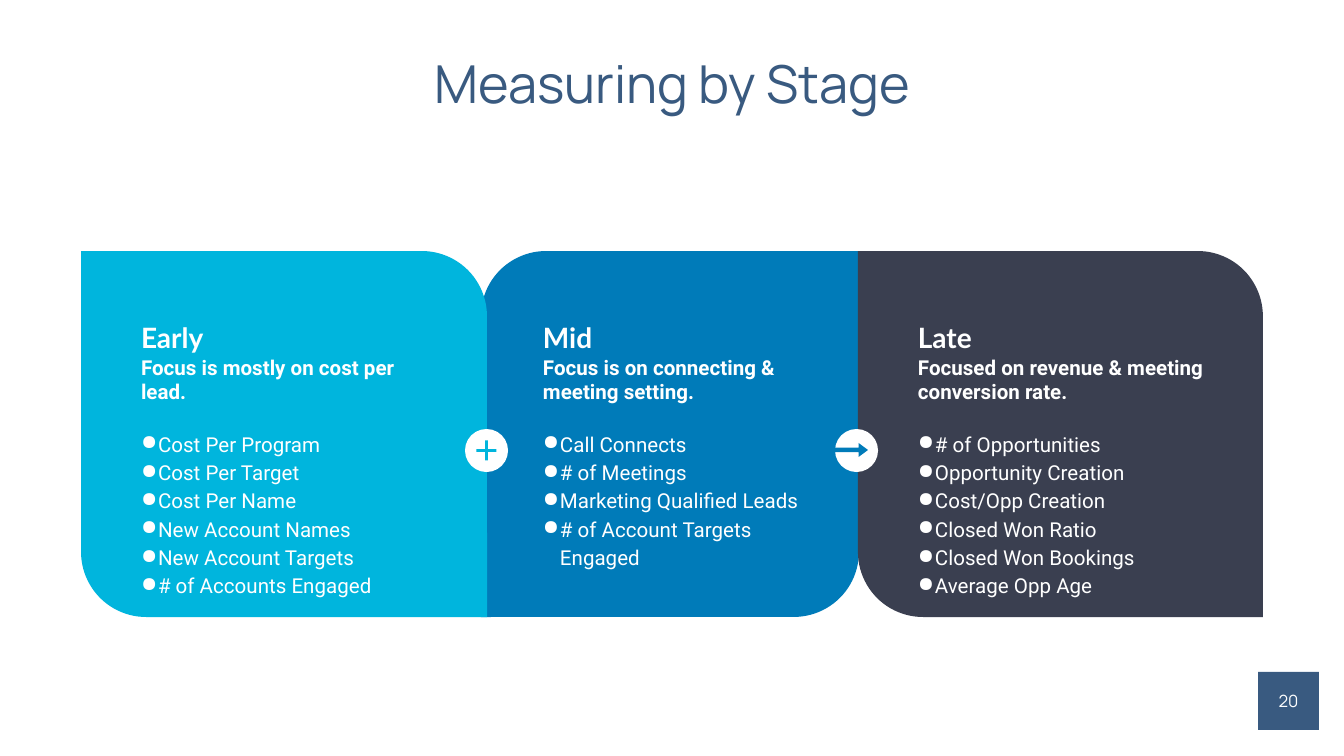
from typing import NamedTuple

from lxml.etree import SubElement
from pptx import Presentation
from pptx.dml.color import RGBColor
from pptx.enum.shapes import MSO_SHAPE as Preset
from pptx.enum.text import MSO_ANCHOR as Anchor, PP_ALIGN as Align
from pptx.oxml.ns import qn
from pptx.util import Pt

PX = 914400 / 134.4
NAVY, CYAN, BLUE, SLATE, WHITE = "395A80", "00B5DD", "007BB9", "3A3F50", "FFFFFF"
CARD_TOP, CARD_HEIGHT, CARD_ROUNDING = 251, 366, 0.178
HEADING_TOP, HEADING_HEIGHT = 308, 107
METRICS_TOP, METRICS_HEIGHT = 415, 181
TEXT_INSET = 13
BULLET_MARGIN, BULLET_INDENT = 17, -27
DISC_SIZE, DISC_TOP = 43, 429


class Box(NamedTuple):
    left: int
    top: int
    width: int
    height: int


class Stage(NamedTuple):
    name: str
    focus: str
    metrics: list[str]
    color: str
    left: int
    width: int
    text_left: int
    text_width: int
    corners: tuple[float, float]


class Joint(NamedTuple):
    disc_left: int
    symbol: Preset
    symbol_box: Box
    color: str
    adjustments: tuple[float, ...]


RISING, FALLING = (0, CARD_ROUNDING), (CARD_ROUNDING, 0)
STAGES = [
    Stage("Mid", "Focus is on connecting & meeting setting.",
          ["Call Connects", "# of Meetings", "Marketing Qualified Leads",
           "# of Account Targets Engaged"],
          BLUE, 481, 378, 530, 282, FALLING),
    Stage("Early", "Focus is mostly on cost per lead.",
          ["Cost Per Program", "Cost Per Target", "Cost Per Name",
           "New Account Names", "New Account Targets", "# of Accounts Engaged"],
          CYAN, 81, 406, 128, 304, RISING),
    Stage("Late", "Focused on revenue & meeting conversion rate.",
          ["# of Opportunities", "Opportunity Creation", "Cost/Opp Creation",
           "Closed Won Ratio", "Closed Won Bookings", "Average Opp Age"],
          SLATE, 858, 405, 905, 327, RISING),
]
JOINTS = [
    Joint(835, Preset.RIGHT_ARROW, Box(835, 443, 33, 14), BLUE, (0.32, 0.67)),
    Joint(465, Preset.MATH_PLUS, Box(473, 437, 27, 27), CYAN, (0.1,)),
]


def emu(px: int) -> int:
    return round(px * PX)


def rgb(color: str) -> RGBColor:
    return RGBColor.from_string(color)


def add_solid(slide, preset: Preset, box: Box, color: str, adjustments=()):
    shape = slide.shapes.add_shape(preset, *map(emu, box))
    shape.shadow.inherit = False
    shape.fill.solid()
    shape.fill.fore_color.rgb = rgb(color)
    shape.line.fill.background()
    for index, value in enumerate(adjustments):
        shape.adjustments[index] = value
    return shape


def set_frame(shape, inset: int, anchor=Anchor.TOP):
    frame = shape.text_frame
    frame.word_wrap = True
    frame.vertical_anchor = anchor
    frame.margin_left = frame.margin_right = emu(inset)
    frame.margin_top = frame.margin_bottom = emu(inset)
    return frame


def add_frame(slide, box: Box, inset: int, anchor=Anchor.TOP):
    return set_frame(slide.shapes.add_textbox(*map(emu, box)), inset, anchor)


def style(paragraph, text: str, font: str, size: int, color=WHITE, bold=False,
          align=Align.LEFT) -> None:
    paragraph.text = text
    paragraph.alignment = align
    paragraph.font.name = font
    paragraph.font.size = Pt(size)
    paragraph.font.bold = bold
    paragraph.font.color.rgb = rgb(color)


def add_bullet(paragraph) -> None:
    properties = paragraph._p.get_or_add_pPr()
    properties.set("marL", str(emu(BULLET_MARGIN)))
    properties.set("indent", str(emu(BULLET_INDENT)))
    bullet_color = SubElement(properties, qn("a:buClr"))
    SubElement(bullet_color, qn("a:srgbClr"), val=WHITE)
    SubElement(properties, qn("a:buChar"), char="●")


def draw_stage(slide, stage: Stage) -> None:
    add_solid(slide, Preset.ROUND_2_DIAG_RECTANGLE,
              Box(stage.left, CARD_TOP, stage.width, CARD_HEIGHT),
              stage.color, stage.corners)

    heading = add_frame(slide, Box(stage.text_left, HEADING_TOP,
                                   stage.text_width, HEADING_HEIGHT), TEXT_INSET)
    style(heading.paragraphs[0], stage.name, "Lato", 15, bold=True)
    style(heading.add_paragraph(), stage.focus, "Roboto", 11, bold=True)

    metrics = add_frame(slide, Box(stage.text_left, METRICS_TOP,
                                   stage.text_width, METRICS_HEIGHT), TEXT_INSET)
    for index, metric in enumerate(stage.metrics):
        item = metrics.add_paragraph() if index else metrics.paragraphs[0]
        add_bullet(item)
        item.line_spacing = 1.15
        style(item, metric, "Roboto", 11)


def draw_joint(slide, joint: Joint) -> None:
    add_solid(slide, Preset.OVAL,
              Box(joint.disc_left, DISC_TOP, DISC_SIZE, DISC_SIZE), WHITE)
    add_solid(slide, joint.symbol, joint.symbol_box, joint.color, joint.adjustments)


def main() -> None:
    deck = Presentation()
    deck.slide_width, deck.slide_height = emu(1344), emu(756)
    slide = deck.slides.add_slide(deck.slide_layouts[6])

    title = add_frame(slide, Box(84, 59, 1176, 56), 0, Anchor.MIDDLE).paragraphs[0]
    title.line_spacing = 0.9
    style(title, "Measuring by Stage", "Manrope", 28, NAVY, align=Align.CENTER)

    badge = add_solid(slide, Preset.RECTANGLE, Box(1258, 672, 61, 58), NAVY)
    page_number = set_frame(badge, 0, Anchor.MIDDLE).paragraphs[0]
    style(page_number, "20", "Manrope", 9, align=Align.CENTER)

    for stage in STAGES:
        draw_stage(slide, stage)
    for joint in JOINTS:
        draw_joint(slide, joint)
    deck.save("out.pptx")


if __name__ == "__main__":
    main()
